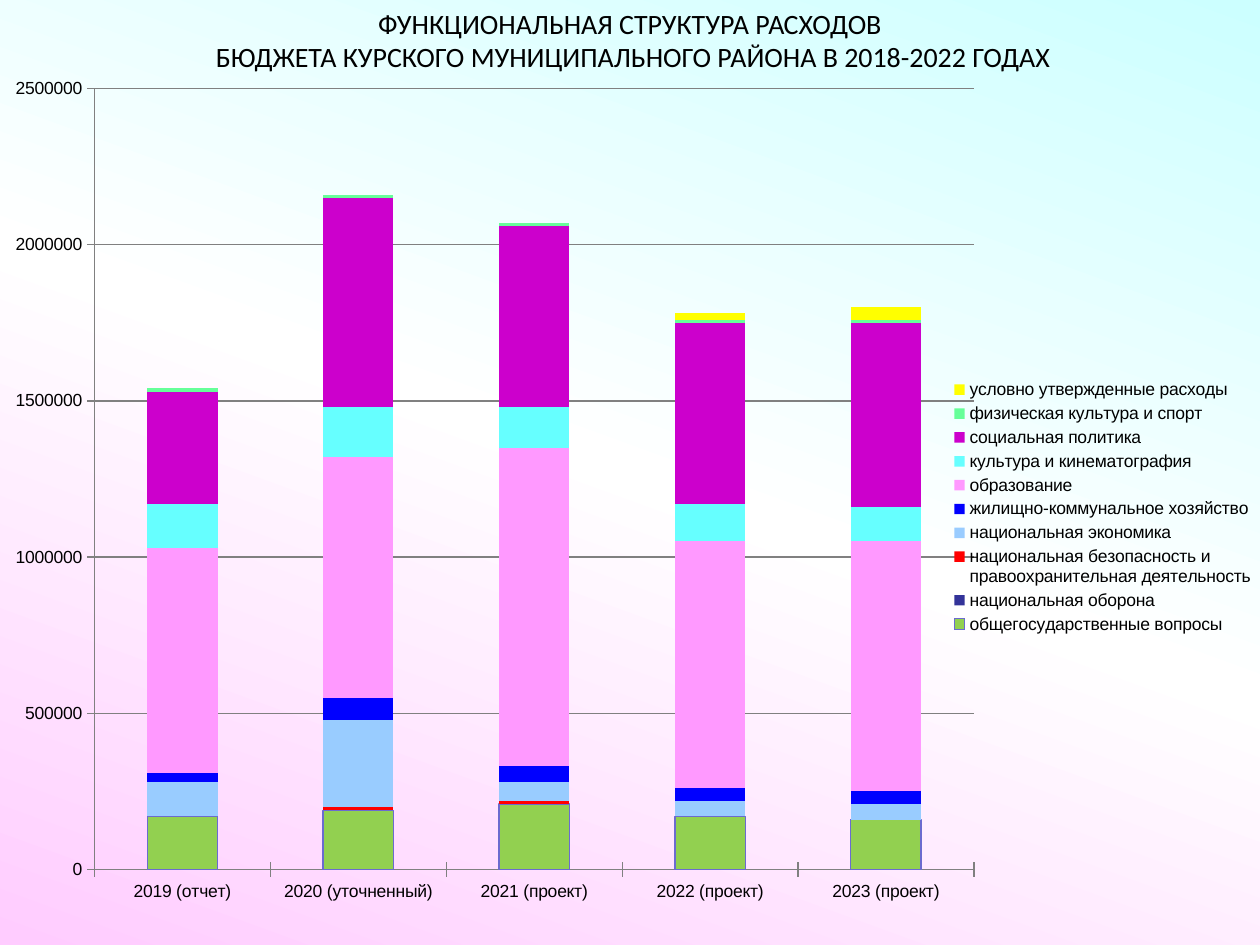
from copy import deepcopy
from typing import NamedTuple, Optional

from lxml.etree import SubElement
from pptx import Presentation
from pptx.chart.chart import Chart
from pptx.chart.data import CategoryChartData
from pptx.dml.color import RGBColor
from pptx.enum.chart import XL_CHART_TYPE, XL_LEGEND_POSITION, XL_TICK_MARK
from pptx.enum.text import PP_ALIGN
from pptx.oxml.ns import qn
from pptx.slide import Slide
from pptx.util import Pt

BLACK = RGBColor(0, 0, 0)
GRAY = RGBColor(0x80, 0x80, 0x80)
WHITE = RGBColor(0xFF, 0xFF, 0xFF)
AQUA = RGBColor(0xCC, 0xFF, 0xFF)
PINK = RGBColor(0xFF, 0xCC, 0xFF)
GREEN = RGBColor(0x92, 0xD0, 0x50)
SLATE = RGBColor(0x6B, 0x6B, 0xCF)
NAVY = RGBColor(0x33, 0x33, 0x99)
RED = RGBColor(0xFF, 0, 0)
SKY = RGBColor(0x99, 0xCC, 0xFF)
BLUE = RGBColor(0, 0, 0xFF)
ROSE = RGBColor(0xFF, 0x99, 0xFF)
CYAN = RGBColor(0x66, 0xFF, 0xFF)
PURPLE = RGBColor(0xCC, 0, 0xCC)
MINT = RGBColor(0x66, 0xFF, 0x99)
YELLOW = RGBColor(0xFF, 0xFF, 0)

WIDTH, HEIGHT = 720, 540
TOP = 39.6
THOUSAND = 1000


class Item(NamedTuple):
    name: str
    sums: tuple[Optional[int], ...]
    fill: RGBColor
    line: Optional[RGBColor] = None


class Frame(NamedTuple):
    x: float
    y: float
    w: float
    h: float


YEARS = ("2019 (отчет)", "2020 (уточненный)", "2021 (проект)",
         "2022 (проект)", "2023 (проект)")
TITLE = ("ФУНКЦИОНАЛЬНАЯ СТРУКТУРА РАСХОДОВ",
         " БЮДЖЕТА КУРСКОГО МУНИЦИПАЛЬНОГО РАЙОНА В 2018-2022 ГОДАХ")
ITEMS = (
    Item("общегосударственные вопросы", (170, 190, 210, 170, 160), GREEN, SLATE),
    Item("национальная оборона", (0, 0, 0, 0, 0), NAVY),
    Item("национальная безопасность и правоохранительная деятельность",
         (0, 10, 10, 0, 0), RED),
    Item("национальная экономика", (110, 280, 60, 50, 50), SKY),
    Item("жилищно-коммунальное хозяйство", (30, 70, 50, 40, 40), BLUE),
    Item("образование", (720, 770, 1020, 790, 800), ROSE),
    Item("культура и кинематография", (140, 160, 130, 120, 110), CYAN),
    Item("социальная политика", (360, 670, 580, 580, 590), PURPLE),
    Item("физическая культура и спорт", (10, 10, 10, 10, 10), MINT),
    Item("условно утвержденные расходы", (None, None, None, 20, 40), YELLOW),
)
PLOT = Frame(0.08, 0.02, 0.7, 0.89)._replace(x=0.075, y=0.022, w=0.698, h=0.892)
LEGEND = Frame(0.75, 0.35, 0.25, 0.3)


def paint_back(slide: Slide) -> None:
    fill = slide.background.fill
    fill.gradient()
    fill.gradient_angle = 250
    stops = slide.element.xpath(".//a:gsLst")[0]
    stops.append(deepcopy(stops[0]))
    for stop, tint, place in zip(fill.gradient_stops, (AQUA, WHITE, PINK), (0, 0.5, 1)):
        stop.color.rgb = tint
        stop.position = place


def add_title(slide: Slide) -> None:
    box = slide.shapes.add_textbox(Pt(0), Pt(0), Pt(WIDTH), Pt(46))
    text = box.text_frame
    text.word_wrap = True
    text.text = "\n".join(TITLE)
    for para in text.paragraphs:
        para.alignment = PP_ALIGN.CENTER
        para.font.name = "Calibri"
        para.font.size = Pt(16)
        para.font.color.rgb = BLACK


def set_frame(chart: Chart, tag: str, spot: int, frame: Frame, inner: bool) -> None:
    host = chart.element.xpath(f".//c:{tag}")[0]
    for old in host.findall(qn("c:layout")):
        host.remove(old)
    layout = SubElement(host, qn("c:layout"))
    host.insert(spot, layout)
    manual = SubElement(layout, qn("c:manualLayout"))
    parts = [("layoutTarget", "inner")] if inner else []
    parts += [("xMode", "edge"), ("yMode", "edge")]
    parts += [(key, str(size)) for key, size in frame._asdict().items()]
    for key, value in parts:
        SubElement(manual, qn(f"c:{key}")).set("val", value)


def style_axes(chart: Chart) -> None:
    scale = chart.value_axis
    scale.minimum_scale = 0
    scale.maximum_scale = 2500 * THOUSAND
    scale.major_unit = 500 * THOUSAND
    scale.has_major_gridlines = True
    scale.major_gridlines.format.line.color.rgb = GRAY
    for axis in (scale, chart.category_axis):
        axis.major_tick_mark = XL_TICK_MARK.CROSS
        axis.format.line.color.rgb = GRAY


def add_bars(slide: Slide) -> None:
    data = CategoryChartData()
    data.categories = YEARS
    for item in ITEMS:
        data.add_series(item.name, [None if n is None else n * THOUSAND for n in item.sums])
    chart = slide.shapes.add_chart(
        XL_CHART_TYPE.COLUMN_STACKED, Pt(0), Pt(TOP), Pt(WIDTH), Pt(HEIGHT - TOP), data
    ).chart
    chart.has_title = False
    chart.font.name = "Arial"
    chart.font.size = Pt(10)
    chart.font.color.rgb = BLACK
    plot = chart.plots[0]
    plot.gap_width = 150
    plot.overlap = 100
    plot.vary_by_categories = False
    for item, series in zip(ITEMS, plot.series):
        series.format.fill.solid()
        series.format.fill.fore_color.rgb = item.fill
        if item.line is not None:
            series.format.line.color.rgb = item.line
            series.format.line.width = Pt(0.75)
    style_axes(chart)
    chart.has_legend = True
    chart.legend.position = XL_LEGEND_POSITION.RIGHT
    chart.legend.include_in_layout = False
    set_frame(chart, "plotArea", 0, PLOT, True)
    set_frame(chart, "legend", 1, LEGEND, False)


def main() -> None:
    deck = Presentation()
    deck.slide_width, deck.slide_height = Pt(WIDTH), Pt(HEIGHT)
    slide = deck.slides.add_slide(deck.slide_layouts[6])
    paint_back(slide)
    add_title(slide)
    add_bars(slide)
    deck.save("out.pptx")


if __name__ == "__main__":
    main()
